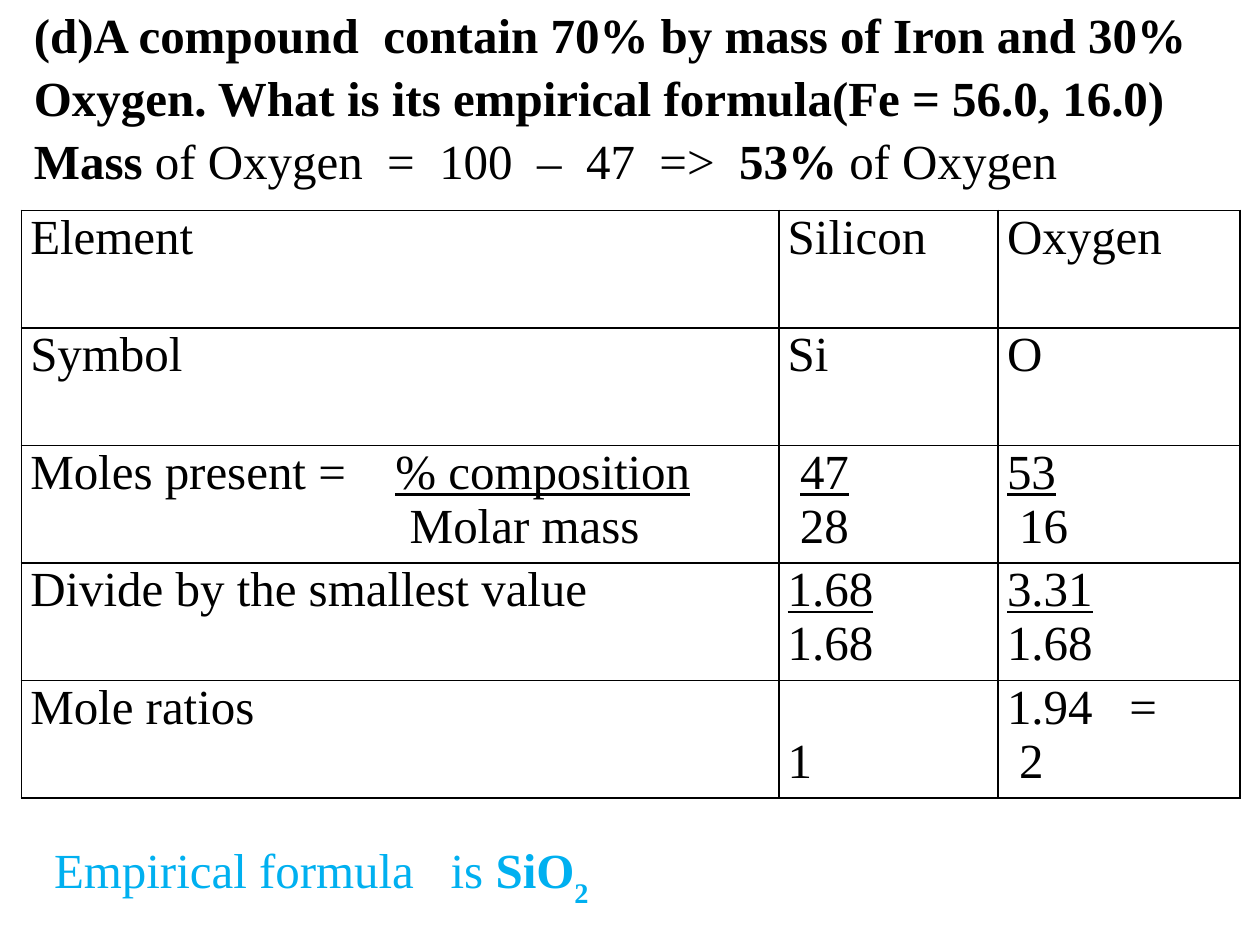
from dataclasses import dataclass

from lxml import etree
from pptx import Presentation
from pptx import util as u
from pptx.dml.color import RGBColor
from pptx.enum import text
from pptx.oxml import ns

BLACK = RGBColor(0x00, 0x00, 0x00)
SKY = RGBColor(0x00, 0xB0, 0xF0)
FONT = "Times New Roman"
SIZE = u.Pt(28)
COL_WIDTHS = (15.27, 4.42, 4.88)
ROW_HEIGHT = 2.37
TAB_STOP = 7.36
DENOMINATOR_INDENT = 7.65
LINE_HEIGHT = 1.1


@dataclass(frozen=True)
class Entry:
    top: str
    bottom: str = ""
    lead: str = ""
    fraction: bool = False
    indent: float = 0
    drop: float = 0


ROWS = (
    (Entry("Element"), Entry("Silicon"), Entry("Oxygen")),
    (Entry("Symbol"), Entry("Si"), Entry("O")),
    (
        Entry("% composition", "Molar mass", lead="Moles present =\t",
              fraction=True, indent=DENOMINATOR_INDENT),
        Entry("47", " 28", lead=" ", fraction=True),
        Entry("53", " 16", fraction=True),
    ),
    (
        Entry("Divide by the smallest value"),
        Entry("1.68", "1.68", fraction=True),
        Entry("3.31", "1.68", fraction=True),
    ),
    (Entry("Mole ratios"), Entry("1", drop=LINE_HEIGHT), Entry("1.94   =", " 2")),
)


def add_run(p, content: str, *, color: RGBColor = BLACK, bold: bool = False,
            underline: bool = False, baseline: int = 0) -> None:
    r = p.add_run()
    r.text = content
    r.font.name = FONT
    r.font.size = SIZE
    r.font.bold = bold
    r.font.underline = underline
    r.font.color.rgb = color
    if baseline:
        r.font._element.set("baseline", str(baseline))


def set_borders(cell) -> None:
    tc_pr = cell._tc.get_or_add_tcPr()
    for position, side in enumerate(("lnL", "lnR", "lnT", "lnB")):
        ln = etree.Element(ns.qn(f"a:{side}"), w=str(u.Pt(1)))
        fill = etree.SubElement(ln, ns.qn("a:solidFill"))
        etree.SubElement(fill, ns.qn("a:srgbClr"), val=str(BLACK))
        tc_pr.insert(position, ln)


def set_indent(p, indent: float) -> None:
    p_pr = p._p.get_or_add_pPr()
    p_pr.set("marL", str(u.Cm(indent)))
    p_pr.set("indent", "0")


def add_tab_stop(p, position: float) -> None:
    tabs = etree.SubElement(p._p.get_or_add_pPr(), ns.qn("a:tabLst"))
    etree.SubElement(tabs, ns.qn("a:tab"), pos=str(u.Cm(position)), algn="l")


def fill_cell(cell, entry: Entry) -> None:
    cell.fill.background()
    set_borders(cell)
    cell.margin_left = cell.margin_right = u.Cm(0.18)
    cell.margin_top = u.Cm(entry.drop)
    cell.margin_bottom = 0
    tf = cell.text_frame
    p = tf.paragraphs[0]
    if "\t" in entry.lead:
        add_tab_stop(p, TAB_STOP)
    if entry.lead:
        add_run(p, entry.lead)
    add_run(p, entry.top, underline=entry.fraction)
    if entry.bottom:
        p = tf.add_paragraph()
        if entry.indent:
            set_indent(p, entry.indent)
        add_run(p, entry.bottom)


def add_mole_table(s) -> None:
    table = s.shapes.add_table(
        len(ROWS), len(COL_WIDTHS), u.Cm(0.43), u.Cm(4.24),
        u.Cm(sum(COL_WIDTHS)), u.Cm(ROW_HEIGHT * len(ROWS))).table
    table.first_row = table.horz_banding = False
    for column, width in zip(table.columns, COL_WIDTHS):
        column.width = u.Cm(width)
    for row, entries in zip(table.rows, ROWS):
        row.height = u.Cm(ROW_HEIGHT)
        for cell, entry in zip(row.cells, entries):
            fill_cell(cell, entry)


def format_question(sp) -> None:
    sp.left, sp.top, sp.width, sp.height = map(u.Cm, (0.43, 0, 24.97, 3.84))
    tf = sp.text_frame
    tf.word_wrap = True
    tf.auto_size = text.MSO_AUTO_SIZE.NONE
    tf.vertical_anchor = text.MSO_ANCHOR.MIDDLE
    question = tf.paragraphs[0]
    add_run(question, "(d)A compound  contain 70% by mass of Iron and 30% Oxygen. "
            "What is its empirical formula(Fe = 56.0, 16.0)", bold=True)
    mass = tf.add_paragraph()
    add_run(mass, "Mass", bold=True)
    add_run(mass, " of Oxygen  =  100  –  47  =>  ")
    add_run(mass, "53%", bold=True)
    add_run(mass, " of Oxygen")
    for p in tf.paragraphs:
        p.alignment = text.PP_ALIGN.LEFT
        p.line_spacing = 1.07


def add_answer(s) -> None:
    sp = s.shapes.add_textbox(*map(u.Cm, (0.84, 16.71, 11.71, 1.45)))
    tf = sp.text_frame
    tf.word_wrap = False
    p = tf.paragraphs[0]
    p.line_spacing = 1.07
    add_run(p, "Empirical formula   is ", color=SKY)
    add_run(p, "SiO", color=SKY, bold=True)
    add_run(p, "2", color=SKY, bold=True, baseline=-30000)


def main() -> None:
    prs = Presentation()
    prs.slide_width, prs.slide_height = u.Cm(25.4), u.Cm(19.05)
    s = prs.slides.add_slide(prs.slide_layouts[5])
    format_question(s.shapes.title)
    add_mole_table(s)
    add_answer(s)
    prs.save("out.pptx")


if __name__ == "__main__":
    main()
